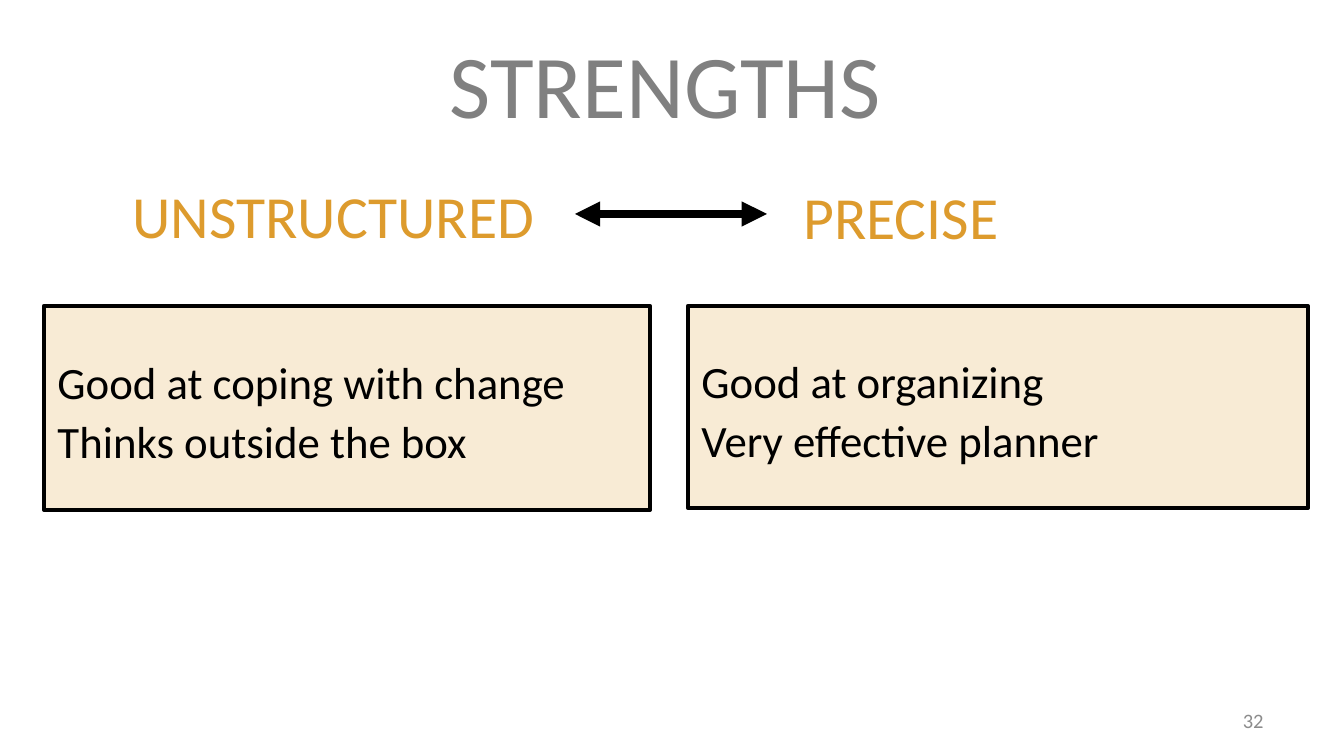
from dataclasses import dataclass

from lxml.etree import SubElement
from pptx import Presentation
from pptx.dml.color import RGBColor
from pptx.enum.shapes import MSO_CONNECTOR
from pptx.enum.text import MSO_ANCHOR, MSO_AUTO_SIZE, PP_ALIGN
from pptx.oxml.ns import qn
from pptx.util import Pt

SCALE = 9144000 / 1344
GOLD, GREY, PALE, BLACK = "DD9B2D", "808080", "8C8C8C", "000000"


@dataclass
class Box:
    """Text with its place in px and its look."""
    x: int
    y: int
    w: int
    h: int
    text: str
    size: int
    hue: str
    align: PP_ALIGN = PP_ALIGN.LEFT
    anchor: MSO_ANCHOR = MSO_ANCHOR.TOP
    wrap: bool = True
    gap: float = 1.0


TITLE = Box(433, 22, 465, 122, "STRENGTHS", 48, GREY, PP_ALIGN.CENTER)
LABELS = [
    Box(103, 172, 445, 86, "UNSTRUCTURED", 32, GOLD, PP_ALIGN.RIGHT),
    Box(790, 173, 344, 86, "PRECISE", 32, GOLD),
    Box(964, 700, 313, 40, "32", 11, PALE, PP_ALIGN.RIGHT, MSO_ANCHOR.MIDDLE),
]
LISTS = [
    Box(44, 306, 606, 204, "Good at coping with change\nThinks outside the box",
        24, BLACK, anchor=MSO_ANCHOR.MIDDLE, wrap=False, gap=1.1),
    Box(688, 306, 620, 202, "Good at organizing\nVery effective planner",
        24, BLACK, anchor=MSO_ANCHOR.MIDDLE, wrap=False, gap=1.1),
]


def px(num: int) -> int:
    """Turn px into EMU."""
    return round(num * SCALE)


def paint(part, hue: str) -> None:
    """Give a fill a solid colour."""
    part.solid()
    part.fore_color.rgb = RGBColor.from_string(hue)


def place(shape, box: Box) -> None:
    """Move a shape and set its text."""
    shape.left, shape.top = px(box.x), px(box.y)
    shape.width, shape.height = px(box.w), px(box.h)
    frame = shape.text_frame
    frame.text = box.text
    frame.word_wrap = box.wrap
    frame.auto_size = MSO_AUTO_SIZE.NONE
    frame.vertical_anchor = box.anchor
    for para in frame.paragraphs:
        props = para._p.get_or_add_pPr()
        props.set("marL", "0")
        props.set("indent", "0")
        SubElement(props, qn("a:buNone"))
        para.alignment = box.align
        para.line_spacing = box.gap
        para.space_before = Pt(0)
        for run in para.runs:
            run.font.name = "Calibri"
            run.font.size = Pt(box.size)
            paint(run.font.fill, box.hue)


def panel(shape, box: Box) -> None:
    """Turn a body placeholder into a tinted, framed list."""
    place(shape, box)
    paint(shape.fill, GOLD)
    tint = shape._element.spPr.find(qn("a:solidFill"))[0]
    SubElement(tint, qn("a:alpha"), val="20000")
    paint(shape.line.fill, BLACK)
    shape.line.width = Pt(2.25)


def arrow(slide, x: int, y: int, end: int) -> None:
    """Draw a level arrow with two heads."""
    link = slide.shapes.add_connector(
        MSO_CONNECTOR.STRAIGHT, px(x), px(y), px(end), px(y))
    paint(link.line.fill, BLACK)
    link.line.width = Pt(4.5)
    line = link.line._get_or_add_ln()
    for tip in ("a:headEnd", "a:tailEnd"):
        SubElement(line, qn(tip), type="triangle")
    SubElement(link._element.spPr, qn("a:effectLst"))


def main() -> None:
    """Build and save the slide."""
    deck = Presentation()
    deck.slide_width, deck.slide_height = px(1344), px(756)
    slide = deck.slides.add_slide(deck.slide_layouts[3])
    place(slide.shapes.title, TITLE)
    for spot, box in enumerate(LISTS, 1):
        panel(slide.placeholders[spot], box)
    for box in LABELS:
        place(slide.shapes.add_textbox(0, 0, 0, 0), box)
    arrow(slide, 575, 214, 767)
    deck.save("out.pptx")


if __name__ == "__main__":
    main()
